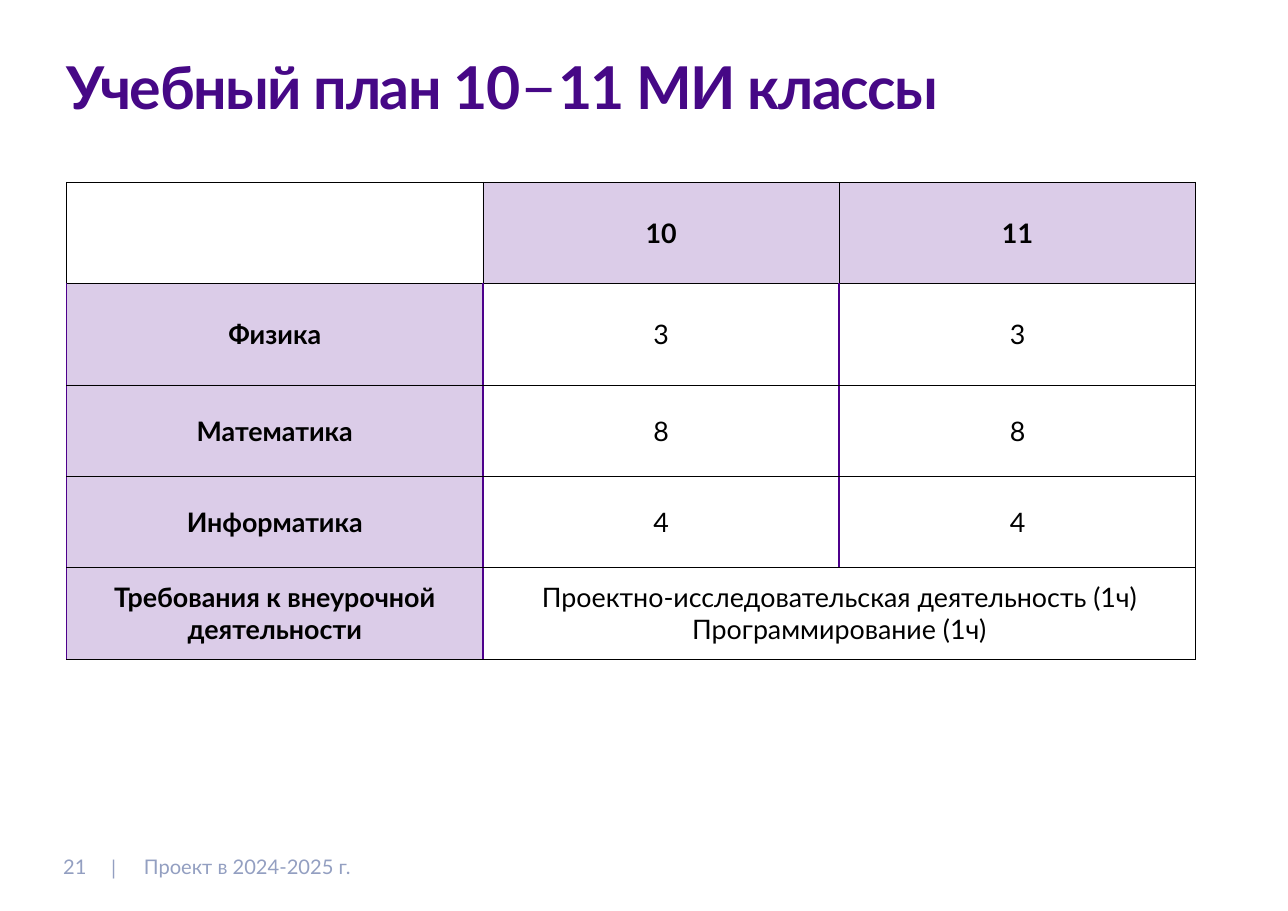
from lxml import etree
from pptx import Presentation
from pptx import util as u
from pptx.dml.color import RGBColor
from pptx.enum import text
from pptx.oxml import ns

INDIGO = RGBColor(0x46, 0x08, 0x86)
PURPLE = RGBColor(0x4D, 0x00, 0x8C)
BLACK = RGBColor(0x00, 0x00, 0x00)
WHITE = RGBColor(0xFF, 0xFF, 0xFF)
MUTED = RGBColor(0x93, 0x9F, 0xC1)

TITLE = {"size": u.Pt(88), "bold": True}
DASH = {"size": u.Pt(96), "bold": False}
FOOTER = {"size": u.Pt(30)}
HEADING = {"size": u.Pt(40), "bold": True}
VALUE = {"size": u.Pt(40), "bold": False}

COLUMNS = [8.62, 7.38, 7.38]
HEIGHTS = [2.1, 2.1, 1.89, 1.89, 1.89]
PLAN = [
    ["", "10", "11"],
    ["Физика", "3", "3"],
    ["Математика", "8", "8"],
    ["Информатика", "4", "4"],
    ["Требования к внеурочной деятельности",
     "Проектно-исследовательская деятельность (1ч)\nПрограммирование (1ч)", ""],
]


class SlideBuilder:
    """Holds the slide style and adds each kind of element to the slide."""

    font_name = "Lato"
    inset = u.Inches(0.06)

    def __init__(self, slide):
        self.slide = slide

    def set_insets(self, target):
        for side in ("left", "right", "top", "bottom"):
            setattr(target, f"margin_{side}", self.inset)

    def add_span(self, para, words, color, style):
        span = para.add_run()
        span.text = words
        for name, value in {"name": self.font_name, **style}.items():
            setattr(span.font, name, value)
        span.font.color.rgb = color
        return span

    def title(self, area, spans):
        box = self.slide.shapes.title
        box.left, box.top, box.width, box.height = map(u.Inches, area)
        frame = box.text_frame
        self.set_insets(frame)
        frame.word_wrap = True
        frame.auto_size = text.MSO_AUTO_SIZE.NONE
        frame.vertical_anchor = text.MSO_ANCHOR.TOP
        para = frame.paragraphs[0]
        para.alignment = text.PP_ALIGN.LEFT
        para.line_spacing = 0.8
        for words, style in spans:
            span = self.add_span(para, words, INDIGO, style)
            span.font._element.set("spc", "-210")

    def label(self, area, words, align, wrap, anchor):
        frame = self.slide.shapes.add_textbox(*map(u.Inches, area)).text_frame
        self.set_insets(frame)
        frame.word_wrap = wrap
        frame.auto_size = text.MSO_AUTO_SIZE.SHAPE_TO_FIT_TEXT
        frame.vertical_anchor = anchor
        frame.paragraphs[0].alignment = align
        self.add_span(frame.paragraphs[0], words, MUTED, FOOTER)

    def borders(self, cell, lines):
        props = cell._tc.get_or_add_tcPr()
        for index, (side, (color, points)) in enumerate(lines.items()):
            line = etree.Element(ns.qn(f"a:ln{side}"), w=str(u.Pt(points)))
            fill = etree.SubElement(line, ns.qn("a:solidFill"))
            etree.SubElement(fill, ns.qn("a:srgbClr"), val=str(color))
            props.insert(index, line)

    def fill(self, cell, tinted):
        if not tinted:
            cell.fill.background()
            return
        cell.fill.solid()
        cell.fill.fore_color.rgb = PURPLE
        color = cell._tc.tcPr.find(".//" + ns.qn("a:srgbClr"))
        etree.SubElement(color, ns.qn("a:alpha"), val="20000")

    def cell(self, cell, words, heading, tinted, lines):
        self.set_insets(cell)
        cell.vertical_anchor = text.MSO_ANCHOR.MIDDLE
        self.fill(cell, tinted)
        self.borders(cell, lines)
        frame = cell.text_frame
        for index, part in enumerate(words.split("\n") if words else []):
            para = frame.add_paragraph() if index else frame.paragraphs[0]
            para.alignment = text.PP_ALIGN.CENTER
            self.add_span(para, part, BLACK, HEADING if heading else VALUE)

    def table(self, left, top, rows):
        size = map(u.Inches, (left, top, sum(COLUMNS), sum(HEIGHTS)))
        table = self.slide.shapes.add_table(len(rows), len(COLUMNS), *size).table
        table.first_row = table.horz_banding = False
        for column, width in zip(table.columns, COLUMNS):
            column.width = u.Inches(width)
        for row, height in zip(table.rows, HEIGHTS):
            row.height = u.Inches(height)
        thin, last, bottom = (BLACK, 1), len(COLUMNS) - 1, len(rows) - 1
        for r, row in enumerate(rows):
            for c, words in enumerate(row):
                heading = r == 0 or c == 0
                outer = c == last or (r == bottom and c > 0)
                left_line = thin if r == 0 else (PURPLE, 3 if c else 1)
                right_line = thin if r == 0 or outer else (PURPLE, 3)
                lines = {"L": left_line, "R": right_line, "T": thin, "B": thin}
                self.cell(table.cell(r, c), words, heading, heading and r + c > 0, lines)
        table.cell(bottom, 1).merge(table.cell(bottom, last))


def main():
    deck = Presentation()
    deck.slide_width, deck.slide_height = u.Inches(26.67), u.Inches(18.86)
    page = deck.slides.add_slide(deck.slide_layouts[5])
    page.background.fill.solid()
    page.background.fill.fore_color.rgb = WHITE
    builder = SlideBuilder(page)
    align, anchor = text.PP_ALIGN, text.MSO_ANCHOR
    builder.title((1.32, 1.18, 24.03, 1.92),
                  [("Учебный план 10", TITLE), ("–", DASH), ("11 МИ классы", TITLE)])
    builder.table(1.38, 3.77, PLAN)
    builder.label((1.2, 17.63, 0.7, 0.62), "21", align.CENTER, False, anchor.BOTTOM)
    builder.label((2.22, 17.64, 0.27, 0.62), "|", align.CENTER, False, anchor.MIDDLE)
    builder.label((2.92, 17.64, 19.03, 0.61), "Проект в 2024-2025 г.",
                  align.LEFT, True, anchor.MIDDLE)
    deck.save("out.pptx")


if __name__ == "__main__":
    main()
